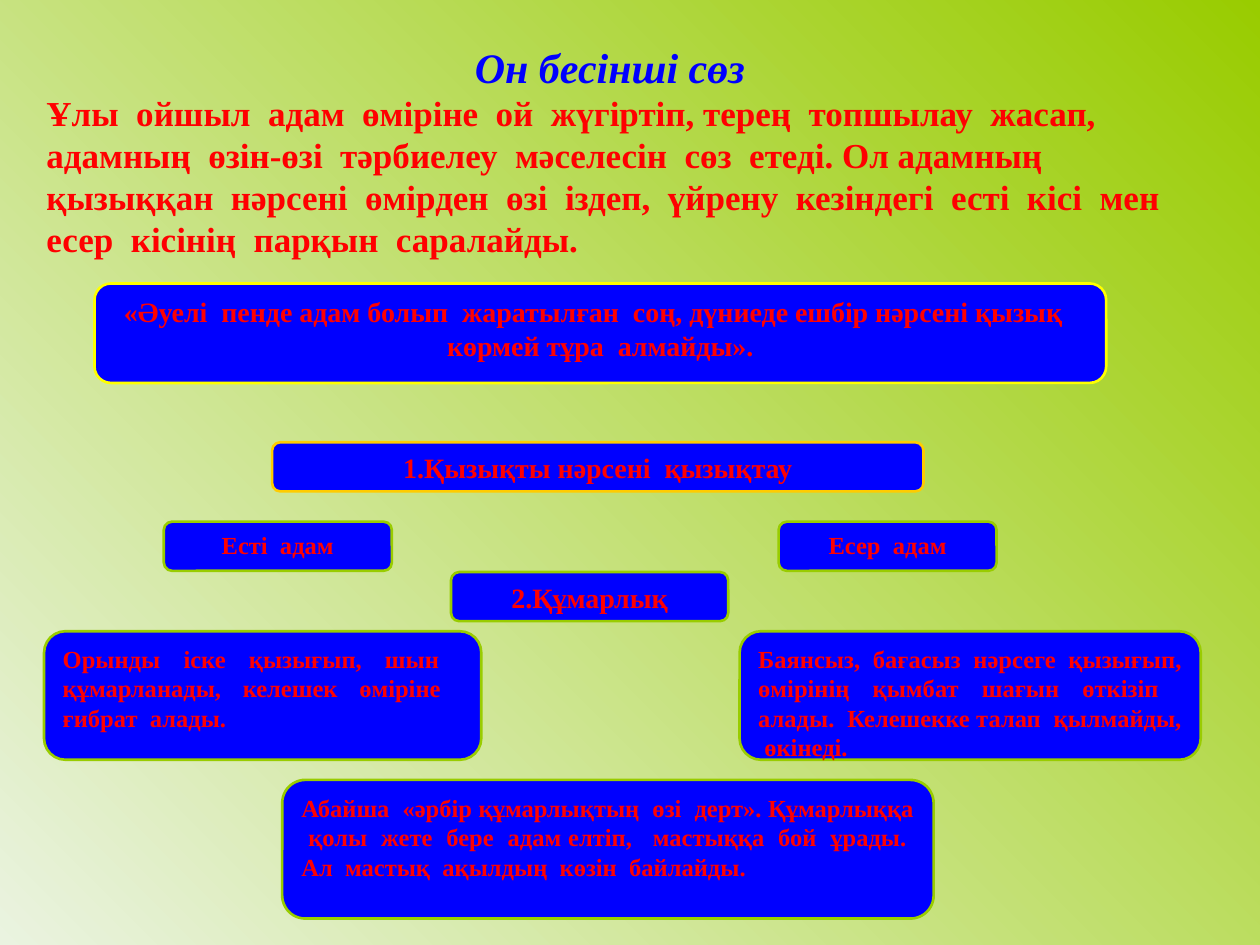
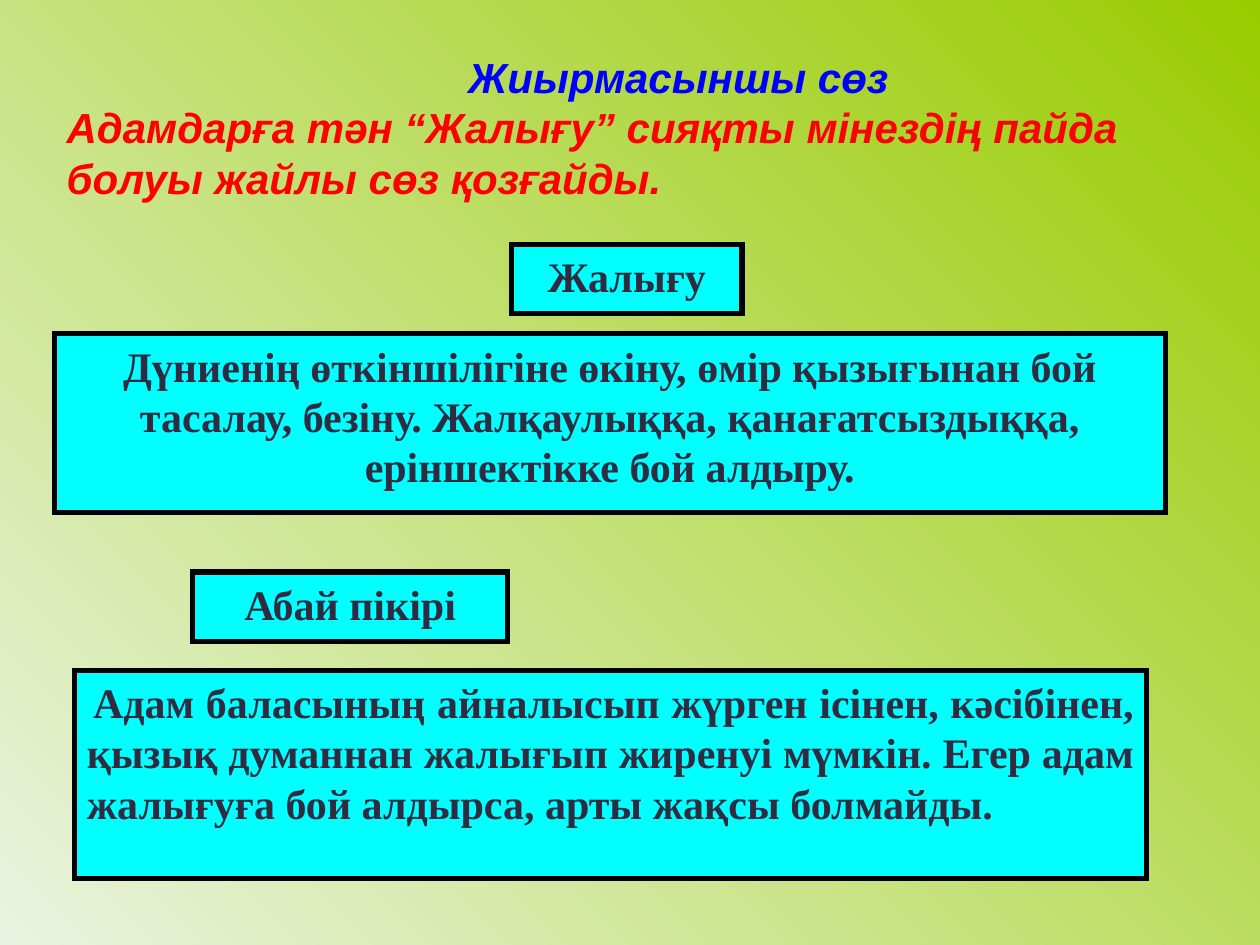
import pptx
import pptx.util
import pptx.dml.color
import pptx.enum.shapes
import pptx.enum.text
from lxml import etree

SHAPE = pptx.enum.shapes.MSO_SHAPE
ALIGN = pptx.enum.text.PP_ALIGN
INCH = pptx.util.Inches

# Theme: colours, fonts and type sizes
THEME = {
    "size": (10, 7.5),
    "gradient": ("99CC00", "EAF3E0"),
    "title": "0000FF", "accent": "FF0000",
    "serif": "Times New Roman", "sans": "Arial",
    "small": 14, "medium": 16, "intro": 20, "large": 24,
}
STYLES = {
    "rounded": dict(shape=SHAPE.ROUNDED_RECTANGLE, fill="0000FF", weight=1.5,
                    ink=THEME["accent"]),
    "process": dict(shape=SHAPE.FLOWCHART_PROCESS, fill="00FFFF", weight=3,
                    ink="2F2C42"),
}
YELLOW, GOLD, GREEN, BLACK = "FFFF00", "FFCC00", "99CC00", "000000"
CENTER, JUSTIFY = ALIGN.CENTER, ALIGN.JUSTIFY

# Content: each place is left, top, width, height in percent of the slide
SLIDES = [
    {
        "style": "rounded",
        "head": dict(
            place=(2.7, 3.73, 92.1, 24.4), indent=3.4, font=THEME["serif"],
            title="Он бесінші сөз", size=THEME["intro"], italic=False,
            intro="Ұлы  ойшыл  адам  өміріне  ой  жүгіртіп, терең  топшылау  жасап, "
                  "адамның  өзін-өзі  тәрбиелеу  мәселесін  сөз  етеді. Ол адамның  "
                  "қызыққан  нәрсені  өмірден  өзі  іздеп,  үйрену  кезіндегі  есті  "
                  "кісі  мен  есер  кісінің  парқын  саралайды."),
        # place, line colour, size, alignment, first-line indent, paragraphs
        "boxes": [
            ((7.5, 30, 80.3, 10.53), YELLOW, "medium", CENTER, 0,
             ["«Әуелі  пенде адам болып  жаратылған  соң, дүниеде ешбір нәрсені қызық  ",
              "көрмей тұра  алмайды»."]),
            ((21.6, 46.8, 51.7, 5.2), GOLD, "medium", CENTER, 0,
             ["1.Қызықты нәрсені  қызықтау"]),
            ((13, 55.2, 18.1, 5.2), GREEN, "small", CENTER, 0, ["Есті  адам"]),
            ((61.8, 55.2, 17.3, 5.2), GREEN, "small", CENTER, 0, ["Есер  адам"]),
            ((3.5, 66.8, 34.7, 13.6), GREEN, "small", JUSTIFY, 0,
             ["Орынды іске қызығып, шын  құмарланады, келешек өміріне  "
              "ғибрат  алады."]),
            ((35.8, 60.53, 22, 5.2), GREEN, "medium", CENTER, 0, ["2.Құмарлық"]),
            ((58.7, 66.8, 36.6, 13.6), GREEN, "small", JUSTIFY, 0,
             ["Баянсыз, бағасыз нәрсеге қызығып, өмірінің қымбат шағын өткізіп  "
              "алады.  Келешекке талап  қылмайды,  өкінеді."]),
            ((22.4, 82.53, 51.7, 14.67), GREEN, "small", JUSTIFY, 0,
             ["Абайша  «әрбір құмарлықтың  өзі  дерт». Құмарлыққа  қолы  жете  "
              "бере  адам елтіп,   мастыққа  бой  ұрады.  Ал  мастық  ақылдың  "
              "көзін  байлайды."]),
        ],
    },
    {
        "style": "process",
        "head": dict(
            place=(4.3, 4.8, 91.4, 17.33), indent=3.19, font=THEME["sans"],
            title="Жиырмасыншы сөз", size=THEME["large"], italic=True,
            intro="Адамдарға тән “Жалығу” сияқты мінездің пайда болуы жайлы "
                  "сөз қозғайды."),
        "boxes": [
            ((40.6, 25.87, 18.3, 7.33), BLACK, "large", CENTER, 0, ["Жалығу"]),
            ((4.3, 35.33, 88.2, 18.93), BLACK, "large", CENTER, 0,
             ["Дүниенің өткіншілігіне өкіну, өмір қызығынан бой тасалау, безіну. "
              "Жалқаулыққа, қанағатсыздыққа, еріншектікке бой алдыру."]),
            ((15.3, 60.53, 25, 7.33), BLACK, "large", CENTER, 0, ["Абай пікірі"]),
            ((5.9, 70.93, 85.1, 22), BLACK, "large", JUSTIFY, 0.05,
             ["Адам баласының айналысып жүрген ісінен, кәсібінен, қызық думаннан "
              "жалығып жиренуі мүмкін. Егер адам жалығуға бой алдырса, арты жақсы "
              "болмайды."]),
        ],
    },
]


def rgb(code):
    return pptx.dml.color.RGBColor.from_string(code)


def area(place):
    """Turn percentages of the slide into lengths."""
    return [INCH(share / 100 * THEME["size"][i % 2])
            for i, share in enumerate(place)]


def write(tf, text, *, first=False, size, color, font=THEME["serif"],
          italic=False, align=ALIGN.LEFT, indent=0):
    """Add one bold paragraph to a text frame."""
    p = tf.paragraphs[0] if first else tf.add_paragraph()
    p.alignment = align
    if indent:
        p._p.get_or_add_pPr().set("indent", str(INCH(indent)))
    r = p.add_run()
    r.text = text
    r.font.name, r.font.size = font, pptx.util.Pt(size)
    r.font.bold, r.font.italic = True, italic
    r.font.color.rgb = rgb(color)


def frame(sp):
    tf = sp.text_frame
    tf.word_wrap = True
    tf.vertical_anchor = pptx.enum.text.MSO_ANCHOR.TOP
    return tf


def paint_background(s):
    fill = s.background.fill
    fill.gradient()
    fill.gradient_angle = 225
    for stop, code, position in zip(fill.gradient_stops, THEME["gradient"], (0, 1)):
        stop.color.rgb = rgb(code)
        stop.position = position


def add_head(s, place, indent, font, title, intro, size, italic):
    tf = frame(s.shapes.add_textbox(*area(place)))
    write(tf, title, first=True, size=THEME["large"], color=THEME["title"],
          font=font, italic=True, indent=indent)
    write(tf, intro, size=size, color=THEME["accent"], font=font, italic=italic)


def add_box(s, style, place, line, size, align, indent, paragraphs):
    sp = s.shapes.add_shape(style["shape"], *area(place))
    sp.shadow.inherit = False
    sp.fill.solid()
    sp.fill.fore_color.rgb = rgb(style["fill"])
    sp.line.color.rgb = rgb(line)
    sp.line.width = pptx.util.Pt(style["weight"])
    if style["shape"] == SHAPE.FLOWCHART_PROCESS:  # sharp corners
        ln = sp.line._get_or_add_ln()
        etree.SubElement(ln, pptx.oxml.ns.qn("a:miter"), lim="800000")
    tf = frame(sp)
    for i, text in enumerate(paragraphs):
        write(tf, text, first=i == 0, size=THEME[size], color=style["ink"],
              align=align, indent=indent)


def main():
    prs = pptx.Presentation()
    prs.slide_width, prs.slide_height = map(INCH, THEME["size"])
    for content in SLIDES:
        s = prs.slides.add_slide(prs.slide_layouts[6])
        paint_background(s)
        add_head(s, **content["head"])
        for box in content["boxes"]:
            add_box(s, STYLES[content["style"]], *box)
    prs.save("out.pptx")


if __name__ == "__main__":
    main()
